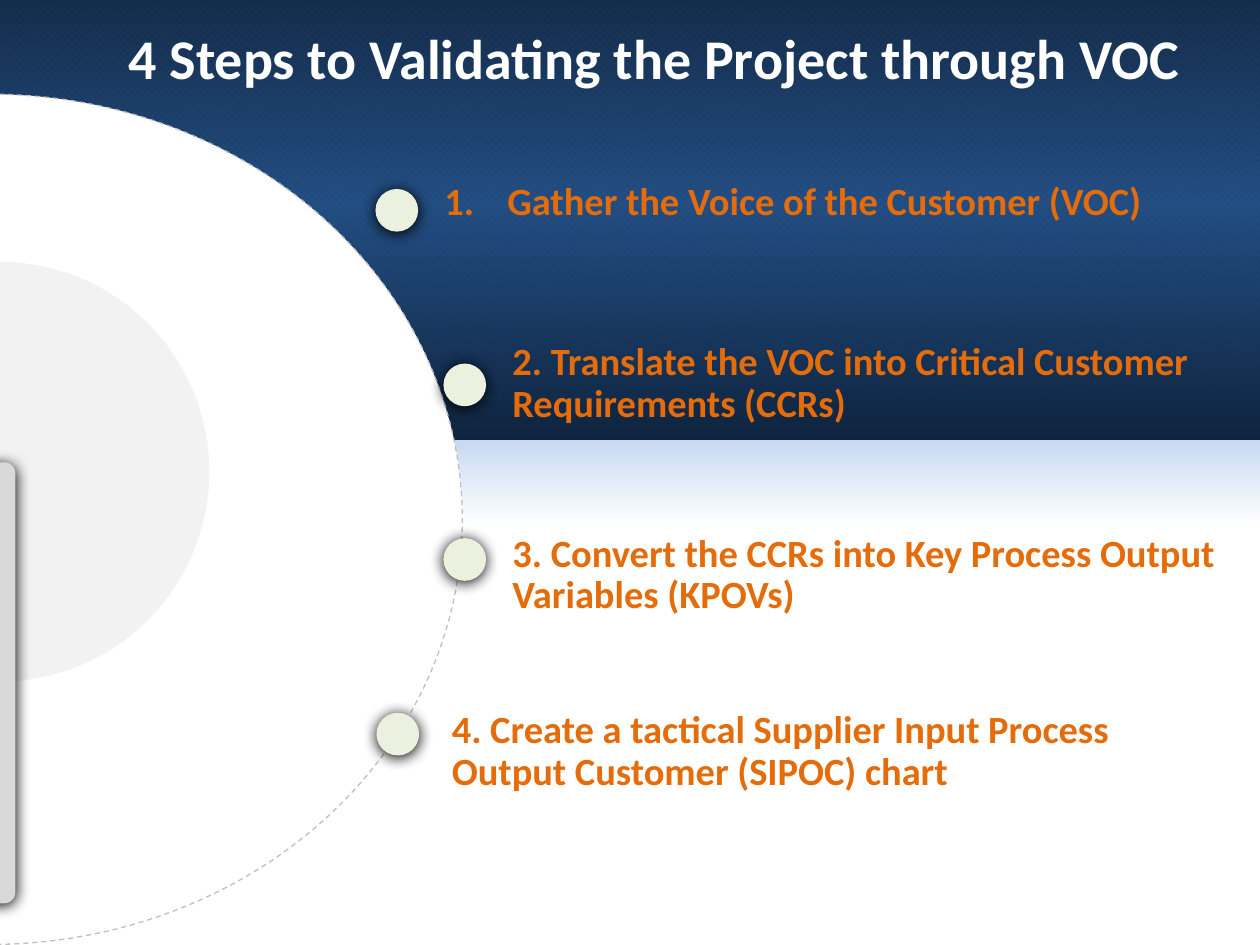
from lxml.etree import SubElement
from pptx import Presentation
from pptx.dml.color import RGBColor
from pptx.enum.dml import MSO_LINE, MSO_PATTERN
from pptx.enum.shapes import MSO_SHAPE
from pptx.enum.text import MSO_ANCHOR, MSO_AUTO_SIZE, PP_ALIGN
from pptx.oxml.ns import qn
from pptx.util import Cm, Pt

NAVY, WHITE, ORANGE = "0F243E", "FFFFFF", "E46C0A"
DOT_SIZE, DOT_TOP, DOT_STEP = 0.86, 3.81, 3.52
STEPS = [
    (7.57, (8.71, 3.56, 16.05, 1.09), "Gather the Voice of the Customer (VOC)"),
    (8.94, (10.08, 6.78, 15.75, 1.96),
     "2. Translate the VOC into Critical Customer Requirements (CCRs)"),
    (8.94, (10.08, 10.64, 14.91, 1.96),
     "3. Convert the CCRs into Key Process Output Variables (KPOVs)"),
    (7.59, (8.86, 14.2, 15.9, 1.96),
     "4. Create a tactical Supplier Input Process Output Customer (SIPOC) chart"),
]


def rgb(value):
    """Turn a hex string into a colour."""
    return RGBColor.from_string(value)


def assign(target, values):
    """Set each attribute named in a dict."""
    for name, value in values.items():
        setattr(target, name, value)


class StepsSlide:
    """Hold the style and the slide being built."""

    font = {"name": "Calibri", "bold": True}
    frame = {"word_wrap": True, "auto_size": MSO_AUTO_SIZE.SHAPE_TO_FIT_TEXT}

    def __init__(self, deck):
        """Add a title-only slide to the deck."""
        self.slide = deck.slides.add_slide(deck.slide_layouts[5])

    def shape(self, kind, box, color=None, adjustments=()):
        """Add a flat preset shape without an outline."""
        shape = self.slide.shapes.add_shape(kind, *map(Cm, box))
        shape.shadow.inherit = False
        shape.line.fill.background()
        if color:
            shape.fill.solid()
            shape.fill.fore_color.rgb = rgb(color)
        for index, value in enumerate(adjustments):
            shape.adjustments[index] = value
        return shape

    def gradient_band(self, box, stops):
        """Add a rectangle shaded from top to bottom."""
        band = self.shape(MSO_SHAPE.RECTANGLE, box)
        band.fill.gradient()
        band.fill.gradient_angle = 270
        stop_list = band.element.spPr.find(".//" + qn("a:gsLst"))
        for default_stop in list(stop_list):
            stop_list.remove(default_stop)
        for position, color, opacity in stops:
            stop = SubElement(stop_list, qn("a:gs"), pos=str(position * 1000))
            tint = SubElement(stop, qn("a:srgbClr"), val=color)
            SubElement(tint, qn("a:alpha"), val=str(opacity * 1000))

    def pattern_band(self, box, front, back):
        """Add a rectangle with an open diamond pattern."""
        fill = self.shape(MSO_SHAPE.RECTANGLE, box).fill
        fill.patterned()
        fill.pattern = MSO_PATTERN.from_xml("openDmnd")
        fill.fore_color.rgb = rgb(front)
        fill.back_color.rgb = rgb(back)

    def raised(self, kind, box, color, adjustments=()):
        """Add a shape with a soft dark shadow."""
        shape = self.shape(kind, box, color, adjustments)
        effects = shape.element.spPr.find(qn("a:effectLst"))
        shadow = SubElement(effects, qn("a:outerShdw"), blurRad=str(Pt(8.5)),
                            dist=str(Pt(1)), dir="5400000", algn="ctr", rotWithShape="0")
        SubElement(shadow, qn("a:srgbClr"), val="000000")

    def put_text(self, holder, words, size, color):
        """Put styled words into a text holder."""
        assign(holder.text_frame, self.frame)
        paragraph = holder.text_frame.paragraphs[0]
        paragraph.alignment = PP_ALIGN.LEFT
        run = paragraph.add_run()
        run.text = words
        assign(run.font, {**self.font, "size": Pt(size)})
        run.font.color.rgb = rgb(color)
        return paragraph

    def step(self, box, words, numbered):
        """Add the text of one step."""
        label = self.slide.shapes.add_textbox(*map(Cm, box))
        paragraph = self.put_text(label, words, 22, ORANGE)
        paragraph.line_spacing = 0.9
        if numbered:
            properties = paragraph._p.get_or_add_pPr()
            properties.set("marL", str(Cm(1.27)))
            properties.set("indent", str(-Cm(1.27)))
            SubElement(properties, qn("a:buFont"), typeface="+mj-lt")
            SubElement(properties, qn("a:buAutoNum"), type="arabicPeriod")

    def title(self, box, words):
        """Place the title in front of the other shapes."""
        title = self.slide.shapes.title
        assign(title, dict(zip(("left", "top", "width", "height"), map(Cm, box))))
        self.put_text(title, words, 32, WHITE)
        title.text_frame.vertical_anchor = MSO_ANCHOR.BOTTOM
        title.element.getparent().append(title.element)


def main():
    """Build and save the slide."""
    deck = Presentation()
    assign(deck, {"slide_width": Cm(25.4), "slide_height": Cm(19.05)})
    page = StepsSlide(deck)

    header = (-0.08, -0.03, 25.5, 8.89)
    page.gradient_band((-0.03, 7.19, 25.48, 11.76),
                       [(0, "8EB4E3", 100), (29, WHITE, 100), (100, WHITE, 100)])
    page.pattern_band(header, NAVY, "558ED5")
    page.gradient_band(header, [(0, NAVY, 90), (46, "1F497D", 90), (100, NAVY, 100)])

    dial = page.shape(MSO_SHAPE.ARC, (-9.73, 1.9, 19.05, 17.14), WHITE, (162, 53.71))
    dial.line.color.rgb = rgb("BFBFBF")
    assign(dial.line, {"width": Pt(0.75), "dash_style": MSO_LINE.DASH})

    for index, (dot_left, text_box, words) in enumerate(STEPS):
        page.step(text_box, words, numbered=index == 0)
        dot_top = DOT_TOP + index * DOT_STEP
        page.raised(MSO_SHAPE.OVAL, (dot_left, dot_top, DOT_SIZE, DOT_SIZE), "EBF1DE")

    page.shape(MSO_SHAPE.ARC, (-4.24, 5.28, 8.46, 8.46), "F2F2F2", (162, 53.6))
    page.raised(MSO_SHAPE.ROUNDED_RECTANGLE, (-0.33, 9.32, 0.64, 8.89), "D9D9D9", (0.35,))
    page.title((2.34, 0.33, 22.02, 1.63), "4 Steps to Validating the Project through VOC")
    deck.save("out.pptx")


if __name__ == "__main__":
    main()
